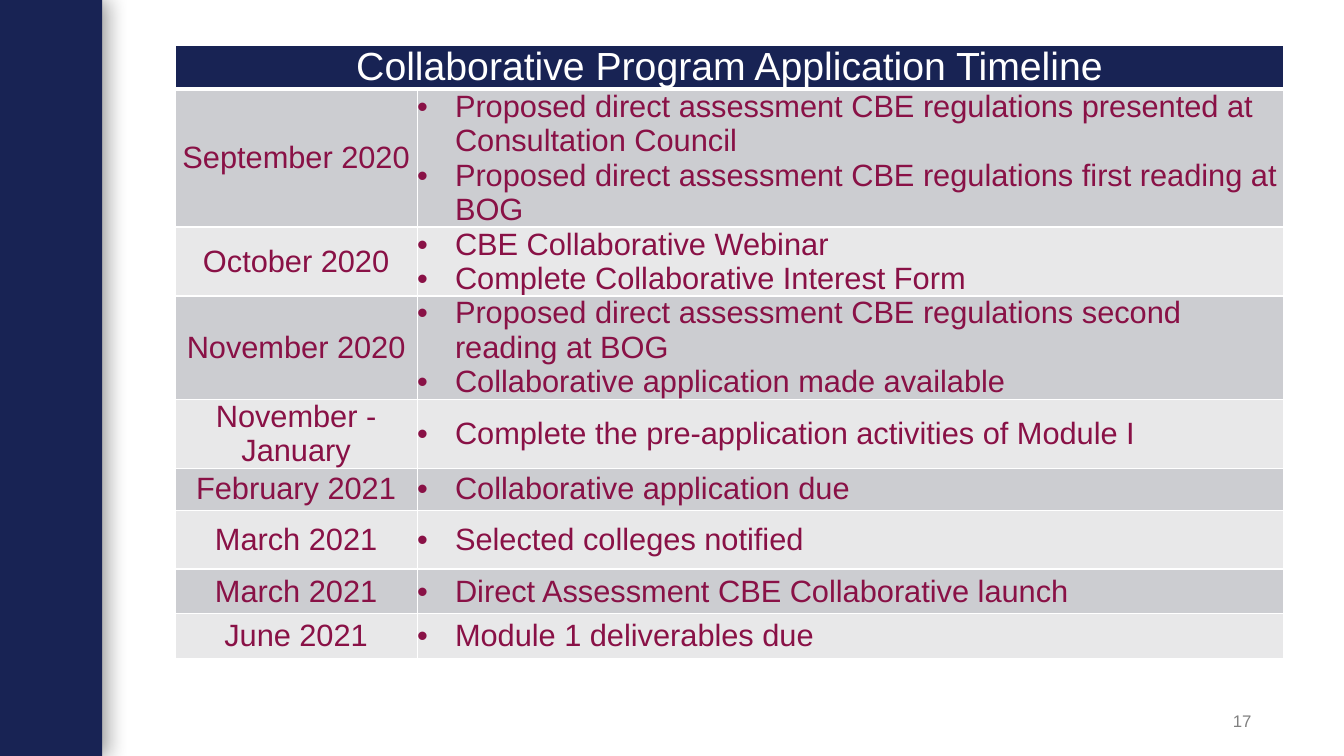
from dataclasses import dataclass

from lxml import etree
from pptx import Presentation
from pptx.dml.color import RGBColor
from pptx.enum import shapes, text
from pptx.oxml import parse_xml
from pptx.oxml.ns import nsdecls, qn
from pptx.util import Pt


@dataclass(frozen=True)
class Theme:
    navy: str = "182354"
    maroon: str = "891146"
    white: str = "FFFFFF"
    gray: str = "808080"
    bands: tuple[str, str] = ("CCCDD1", "E8E8E9")
    font: str = "Arial"
    header_size: float = 28
    body_size: float = 22
    number_size: float = 12


@dataclass(frozen=True)
class Milestone:
    month: str
    steps: tuple[str, ...]
    height: float


THEME = Theme()
TITLE = "Collaborative Program Application Timeline"
HEADER_HEIGHT = 24.5
COLUMN_WIDTHS = (173, 619)
BULLET_INDENT = 27
MILESTONES = (
    Milestone("September 2020", (
        "Proposed direct assessment CBE regulations presented at Consultation Council",
        "Proposed direct assessment CBE regulations first reading at BOG"), 43),
    Milestone("October 2020", (
        "CBE Collaborative Webinar", "Complete Collaborative Interest Form"), 42),
    Milestone("November 2020", (
        "Proposed direct assessment CBE regulations second reading at BOG",
        "Collaborative application made available"), 25),
    Milestone("November - January", (
        "Complete the pre-application activities of Module I",), 30),
    Milestone("February 2021", ("Collaborative application due",), 30),
    Milestone("March 2021", ("Selected colleges notified",), 42),
    Milestone("March 2021", ("Direct Assessment CBE Collaborative launch",), 32),
    Milestone("June 2021", ("Module 1 deliverables due",), 32),
)


def set_all(target, values: dict) -> None:
    for name, value in values.items():
        setattr(target, name, value)


def add_bullet(p) -> None:
    pPr = p._p.get_or_add_pPr()
    pPr.set("marL", str(Pt(BULLET_INDENT)))
    pPr.set("indent", str(-Pt(BULLET_INDENT)))
    etree.SubElement(pPr, qn("a:buFont"), typeface=THEME.font)
    etree.SubElement(pPr, qn("a:buChar"), char="•")


def write(tf, lines: tuple[str, ...], size: float, color: str,
          align=text.PP_ALIGN.LEFT, bullets: bool = False) -> None:
    for i, line in enumerate(lines):
        p = tf.paragraphs[0] if i == 0 else tf.add_paragraph()
        p.alignment = align
        if bullets:
            add_bullet(p)
        r = p.add_run()
        r.text = line
        set_all(r.font, {"name": THEME.font, "size": Pt(size), "bold": False})
        r.font.color.rgb = RGBColor.from_string(color)


def format_cell(cell, fill: str, bottom: float = 1) -> None:
    set_all(cell, {"margin_left": 0, "margin_right": 0, "margin_top": 0,
                   "margin_bottom": 0, "vertical_anchor": text.MSO_ANCHOR.MIDDLE})
    cell.fill.solid()
    cell.fill.fore_color.rgb = RGBColor.from_string(fill)
    tcPr = cell._tc.get_or_add_tcPr()
    for i, (side, width) in enumerate({"L": 1, "R": 1, "T": 1, "B": bottom}.items()):
        tcPr.insert(i, parse_xml(
            f'<a:ln{side} {nsdecls("a")} w="{Pt(width)}"><a:solidFill>'
            f'<a:srgbClr val="{THEME.white}"/></a:solidFill></a:ln{side}>'))


def add_side_band(slide) -> None:
    sp = slide.shapes.add_shape(shapes.MSO_SHAPE.RECTANGLE, 0, 0, Pt(73), Pt(540))
    sp.fill.solid()
    sp.fill.fore_color.rgb = RGBColor.from_string(THEME.navy)
    sp.line.fill.background()
    sp.shadow.inherit = False
    sp._element.spPr.find(qn("a:effectLst")).append(parse_xml(
        f'<a:outerShdw {nsdecls("a")} blurRad="{Pt(15)}" dist="{Pt(3)}" dir="0" '
        'algn="l" rotWithShape="0"><a:srgbClr val="000000">'
        '<a:alpha val="40000"/></a:srgbClr></a:outerShdw>'))


def add_timeline(slide) -> None:
    heights = [HEADER_HEIGHT] + [m.height for m in MILESTONES]
    table = slide.shapes.add_table(
        len(heights), len(COLUMN_WIDTHS), Pt(125), Pt(32.5),
        Pt(sum(COLUMN_WIDTHS)), Pt(sum(heights))).table
    set_all(table, {"first_row": False, "horz_banding": False})
    for column, width in zip(table.columns, COLUMN_WIDTHS):
        column.width = Pt(width)
    for row, height in zip(table.rows, heights):
        row.height = Pt(height)

    # Header across both columns
    header = table.cell(0, 0)
    header.merge(table.cell(0, 1))
    for cell in table.rows[0].cells:
        format_cell(cell, THEME.navy, bottom=3)
    write(header.text_frame, (TITLE,), THEME.header_size, THEME.white,
          text.PP_ALIGN.CENTER)

    # Milestone rows
    for i, milestone in enumerate(MILESTONES):
        month, steps = table.rows[i + 1].cells
        for cell in (month, steps):
            format_cell(cell, THEME.bands[i % 2])
        write(month.text_frame, (milestone.month,), THEME.body_size, THEME.maroon,
              text.PP_ALIGN.CENTER)
        write(steps.text_frame, milestone.steps, THEME.body_size, THEME.maroon,
              bullets=True)


def add_page_number(slide) -> None:
    tf = slide.shapes.add_textbox(Pt(822), Pt(500.5), Pt(72), Pt(28.75)).text_frame
    set_all(tf, {"word_wrap": True, "margin_right": 0,
                 "vertical_anchor": text.MSO_ANCHOR.MIDDLE})
    write(tf, ("17",), THEME.number_size, THEME.gray, text.PP_ALIGN.RIGHT)


def main() -> None:
    prs = Presentation()
    set_all(prs, {"slide_width": Pt(960), "slide_height": Pt(540)})
    slide = prs.slides.add_slide(prs.slide_layouts[6])
    add_side_band(slide)
    add_timeline(slide)
    add_page_number(slide)
    prs.save("out.pptx")


if __name__ == "__main__":
    main()
